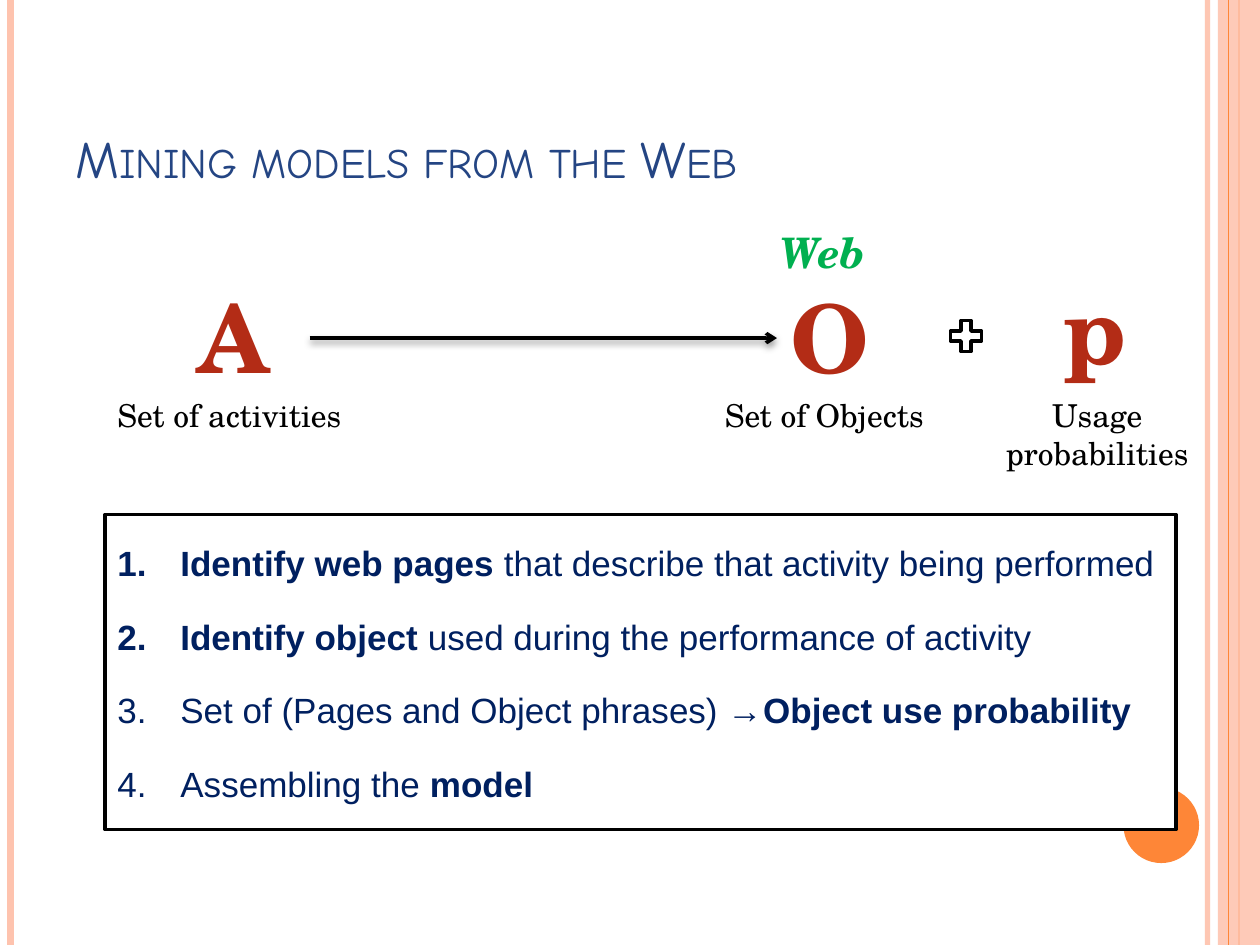
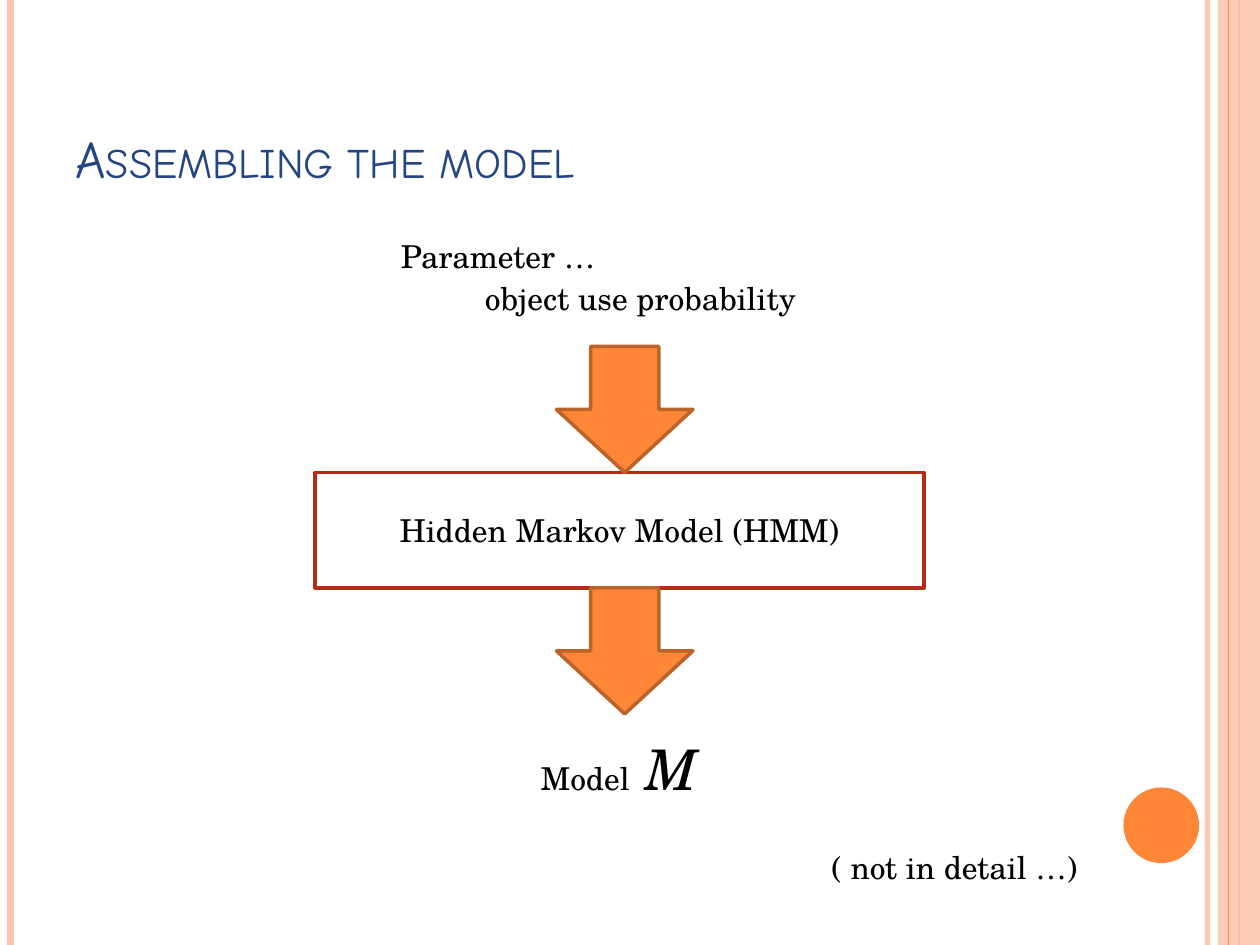
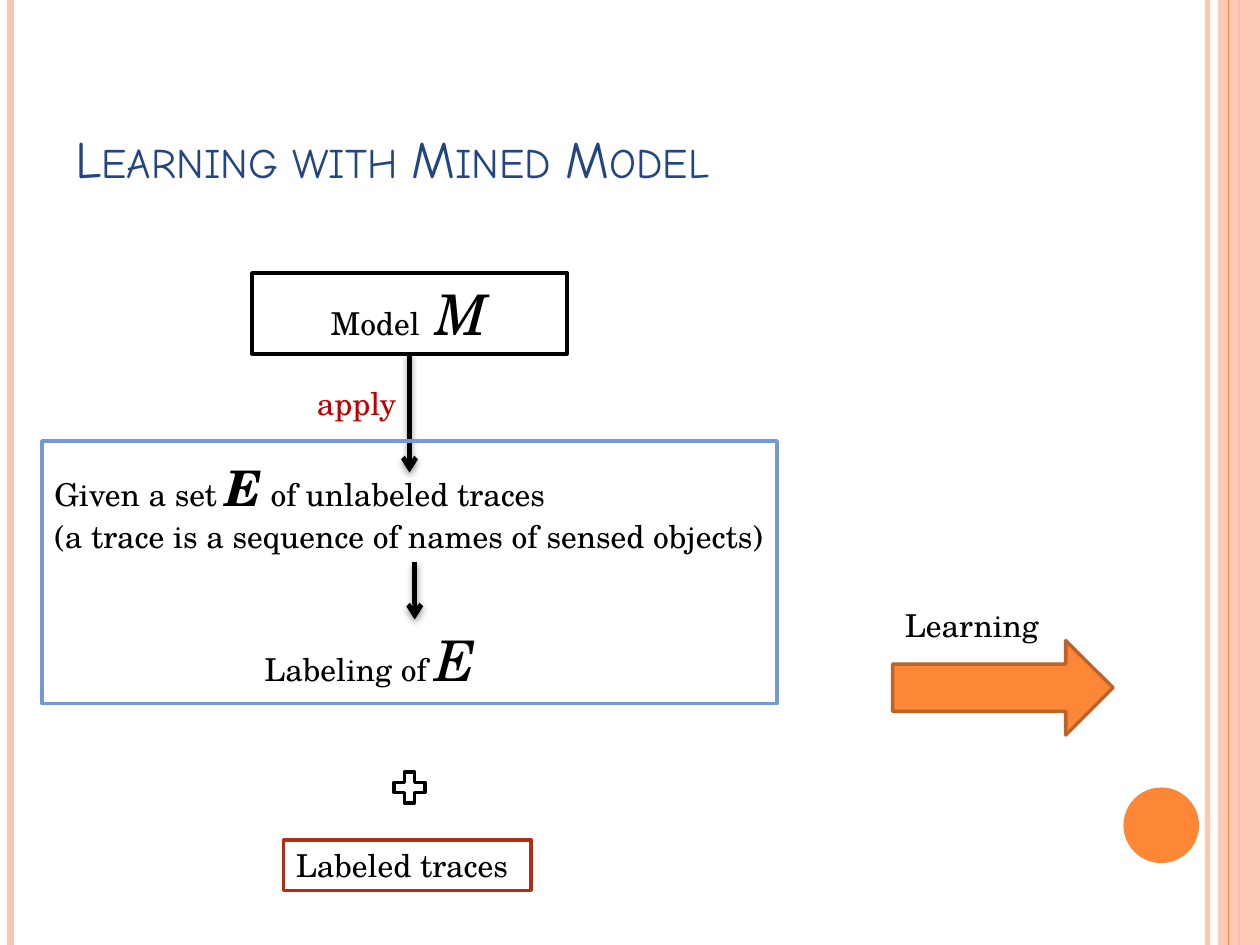
from dataclasses import dataclass

from lxml import etree
from pptx import Presentation
from pptx.dml.color import RGBColor
from pptx.enum.shapes import MSO_CONNECTOR, MSO_SHAPE
from pptx.enum.text import MSO_ANCHOR, MSO_AUTO_SIZE, PP_ALIGN
from pptx.oxml import parse_xml
from pptx.oxml.ns import nsdecls, qn
from pptx.util import Inches, Pt

COLUMNS, ROWS = 120, 90
CELL = Inches(10) / COLUMNS


@dataclass(frozen=True)
class Theme:
    serif: str = "TeX Gyre Schola"
    sans: str = "Arial"
    heading: str = "Comic Neue"
    white: str = "FFFFFF"
    black: str = "000000"
    heading_blue: str = "244583"
    navy: str = "002060"
    sky: str = "7598D9"
    brick: str = "B32C16"
    red: str = "C00000"
    green: str = "00B050"
    orange: str = "FE8637"
    rust: str = "BC6329"
    peach: str = "FEC3AE"
    halo: str = "FEFEFE"
    label_size: float = 18
    step_size: float = 20
    web_size: float = 24
    set_size: float = 28
    title_size: float = 30
    variable_size: float = 32
    symbol_size: float = 54
    border: float = 2
    flow: float = 2.75


THEME = Theme()


@dataclass(frozen=True)
class Span:
    text: str
    size: float = THEME.label_size
    color: str = THEME.black
    font: str = THEME.serif
    bold: bool = False
    italic: bool = False
    small_caps: bool = False
    halo: bool = False


MODEL_M = [Span("Model"), Span(" M", THEME.variable_size, italic=True)]


def grid(*cells):
    """Turn counts of columns and rows into lengths."""
    return [round(count * CELL) for count in cells]


def set_alpha(color_format_parent, percent):
    for color in color_format_parent.iter(qn("a:srgbClr")):
        etree.SubElement(color, qn("a:alpha")).set("val", str(percent * 1000))


def write_span(paragraph, span):
    run = paragraph.add_run()
    run.text = span.text
    font = run.font
    font.name, font.size = span.font, Pt(span.size)
    font.bold, font.italic = span.bold, span.italic
    font.color.rgb = RGBColor.from_string(span.color)
    properties = run._r.get_or_add_rPr()
    if span.small_caps:
        properties.set("cap", "small")
    if span.halo:
        properties.insert(0, parse_xml(
            f'<a:ln {nsdecls("a")} w="{Pt(1.5)}"><a:solidFill>'
            f'<a:srgbClr val="{THEME.halo}"/></a:solidFill></a:ln>'))


def write_lines(shape, lines, align=PP_ALIGN.LEFT, anchor=MSO_ANCHOR.TOP, wrap=True, grow=True):
    frame = shape.text_frame
    frame.word_wrap = wrap
    frame.vertical_anchor = anchor
    if grow:
        frame.auto_size = MSO_AUTO_SIZE.SHAPE_TO_FIT_TEXT
    paragraph = frame.paragraphs[0]
    paragraph.alignment = align
    for number, spans in enumerate(lines):
        if number:
            paragraph.add_line_break()
        for span in spans:
            write_span(paragraph, span)


def add_text(slide, area, *lines, **layout):
    write_lines(slide.shapes.add_textbox(*grid(*area)), lines, **layout)


def add_figure(slide, kind, area, fill=None, line=None):
    figure = slide.shapes.add_shape(kind, *grid(*area))
    figure.shadow.inherit = False
    if fill:
        figure.fill.solid()
        figure.fill.fore_color.rgb = RGBColor.from_string(fill)
    else:
        figure.fill.background()
    if line:
        figure.line.color.rgb = RGBColor.from_string(line)
        figure.line.width = Pt(THEME.border)
    else:
        figure.line.fill.background()
    return figure


def add_line(slide, start, end, color, width):
    line = slide.shapes.add_connector(MSO_CONNECTOR.STRAIGHT, *grid(*start, *end))
    line.line.color.rgb = RGBColor.from_string(color)
    line.line.width = Pt(width)
    etree.SubElement(line._element.spPr, qn("a:effectLst"))
    return line


def add_flow(slide, start, end, width, drop, opacity):
    """Draw a black arrow with a soft shadow below it."""
    arrow = add_line(slide, start, end, THEME.black, width)
    properties = arrow._element.spPr
    etree.SubElement(properties.find(qn("a:ln")), qn("a:tailEnd")).set("type", "arrow")
    properties.find(qn("a:effectLst")).append(parse_xml(
        f'<a:outerShdw {nsdecls("a")} blurRad="{Pt(4)}" dist="{Pt(drop)}" dir="5400000" '
        f'rotWithShape="0"><a:srgbClr val="{THEME.black}"><a:alpha val="{opacity * 1000}"/>'
        '</a:srgbClr></a:outerShdw>'))


def add_plus(slide, column, row):
    add_figure(slide, MSO_SHAPE.MATH_PLUS, (column, row, 4, 4), THEME.white, THEME.black)


def add_block_arrow(slide, kind, area):
    add_figure(slide, kind, area, THEME.orange, THEME.rust)


def add_symbol(slide, area, letter, wrap=False):
    symbol = Span(letter, THEME.symbol_size, THEME.brick, bold=True, halo=True)
    add_text(slide, area, [symbol], align=PP_ALIGN.CENTER, wrap=wrap)


def add_steps(slide, area, steps):
    """Draw the framed numbered list; each step is pairs of wording and boldness."""
    panel = add_figure(slide, MSO_SHAPE.RECTANGLE, area, THEME.white, THEME.black)
    frame = panel.text_frame
    frame.word_wrap = True
    frame.vertical_anchor = MSO_ANCHOR.TOP
    for number, step in enumerate(steps):
        paragraph = frame.add_paragraph() if number else frame.paragraphs[0]
        paragraph.alignment = PP_ALIGN.LEFT
        paragraph.line_spacing = 1.5
        if number:
            paragraph.space_before = Pt(6)
        properties = paragraph._p.get_or_add_pPr()
        properties.set("marL", str(Inches(0.5)))
        properties.set("indent", str(-Inches(0.5)))
        etree.SubElement(properties, qn("a:buFont")).set("typeface", "+mj-lt")
        etree.SubElement(properties, qn("a:buAutoNum")).set("type", "arabicPeriod")
        for wording, bold in step:
            write_span(paragraph, Span(wording, THEME.step_size, THEME.navy, THEME.sans, bold))


def add_rule(slide, column, color, width):
    return add_line(slide, (column, 0), (column, ROWS), color, width)


def start_slide(deck, title):
    """Add a slide with the side bands, the corner disc and its title."""
    slide = deck.slides.add_slide(deck.slide_layouts[6])
    inner_rule = add_rule(slide, 115, THEME.peach, 3)
    set_alpha(inner_rule._element.spPr, 93)
    add_rule(slide, 1, THEME.peach, 4.5)
    add_rule(slide, 118, THEME.orange, 1.5)
    band = add_figure(slide, MSO_SHAPE.RECTANGLE, (116, 0, 4, ROWS), THEME.peach)
    set_alpha(band._element.spPr, 87)
    add_rule(slide, 117, THEME.orange, 0.75)
    add_figure(slide, MSO_SHAPE.OVAL, (107, 75, 7.2, 7.2), THEME.orange)
    heading = Span(title, THEME.title_size, THEME.heading_blue, THEME.heading, small_caps=True)
    add_text(slide, (6, 3.6, 98, 15), [heading], anchor=MSO_ANCHOR.BOTTOM, grow=False)
    return slide


def build_mining(deck):
    slide = start_slide(deck, "Mining models from the Web")
    add_steps(slide, (10, 49, 102, 30), [
        [("Identify web pages", True), (" that describe that activity being performed", False)],
        [("Identify object", True), (" used during the performance of activity", False)],
        [("Set of (Pages and Object phrases) →", False), ("Object use probability", True)],
        [("Assembling the ", False), ("model", True)],
    ])
    add_symbol(slide, (15, 26, 14.5, 12.1), "A", wrap=True)
    add_symbol(slide, (74, 26, 10, 12.1), "O")
    add_symbol(slide, (100, 25.1, 8.5, 12.1), "p")
    add_text(slide, (10, 37.1, 25, 4.8), [Span("Set of activities")])
    add_text(slide, (66, 37.1, 25, 4.8), [Span("Set of Objects")], align=PP_ALIGN.CENTER)
    add_text(slide, (92, 37.1, 25, 8.5), [Span("Usage probabilities")], align=PP_ALIGN.CENTER)
    add_flow(slide, (29.5, 32.2), (74, 32.2), THEME.border, drop=2, opacity=40)
    add_plus(slide, 90, 30)
    web = Span("Web", THEME.web_size, THEME.green, bold=True, italic=True)
    add_text(slide, (73, 21, 10.8, 6), [web], align=PP_ALIGN.CENTER, wrap=False)


def build_assembling(deck):
    slide = start_slide(deck, "Assembling the model")
    hmm = add_figure(slide, MSO_SHAPE.RECTANGLE, (30, 45, 58, 11), THEME.white, THEME.brick)
    write_lines(hmm, [[Span("Hidden Markov Model (HMM)")]], PP_ALIGN.CENTER,
                MSO_ANCHOR.MIDDLE, grow=False)
    for row in (33, 56):
        add_block_arrow(slide, MSO_SHAPE.DOWN_ARROW, (53, row, 13, 12))
    add_text(slide, (44, 69.4, 30, 7.7), MODEL_M, align=PP_ALIGN.CENTER)
    add_text(slide, (45, 26, 32.3, 4.8), [Span("object use probability")], wrap=False)
    add_text(slide, (37, 22, 29, 4.8), [Span("Parameter …")])
    add_text(slide, (78, 80.2, 37, 4.8), [Span("( not in detail …)")])


def build_learning(deck):
    slide = start_slide(deck, "Learning with Mined Model")
    add_text(slide, (4, 43, 71, 10.5),
             [Span("Given a set "), Span("E", THEME.set_size, bold=True, italic=True),
              Span(" of unlabeled traces")],
             [Span("(a trace is a sequence of names of sensed objects)")])
    model = add_figure(slide, MSO_SHAPE.RECTANGLE, (24, 26, 30, 7.7), line=THEME.black)
    write_lines(model, [MODEL_M], PP_ALIGN.CENTER)
    add_flow(slide, (39, 33.7), (39, 45), THEME.flow, drop=1.6, opacity=42)
    add_text(slide, (29, 36, 18, 4.8), [Span("apply", color=THEME.red)])
    add_flow(slide, (39.5, 53.5), (39.5, 59), THEME.flow, drop=1.6, opacity=42)
    add_text(slide, (24, 59, 31, 7.7),
             [Span("Labeling of "), Span("E", THEME.variable_size, italic=True)])
    traces = add_figure(slide, MSO_SHAPE.RECTANGLE, (27, 80, 23.6, 4.8), THEME.white, THEME.brick)
    write_lines(traces, [[Span("Labeled traces")]], wrap=False)
    add_figure(slide, MSO_SHAPE.RECTANGLE, (4, 42, 70, 25), line=THEME.sky)
    add_block_arrow(slide, MSO_SHAPE.RIGHT_ARROW, (85, 61, 21, 9))
    add_text(slide, (85, 57.1, 24, 4.8), [Span("Learning")])
    add_plus(slide, 37, 73)


def main():
    deck = Presentation()
    deck.slide_width, deck.slide_height = grid(COLUMNS, ROWS)
    build_mining(deck)
    build_assembling(deck)
    build_learning(deck)
    deck.save("out.pptx")


if __name__ == "__main__":
    main()
